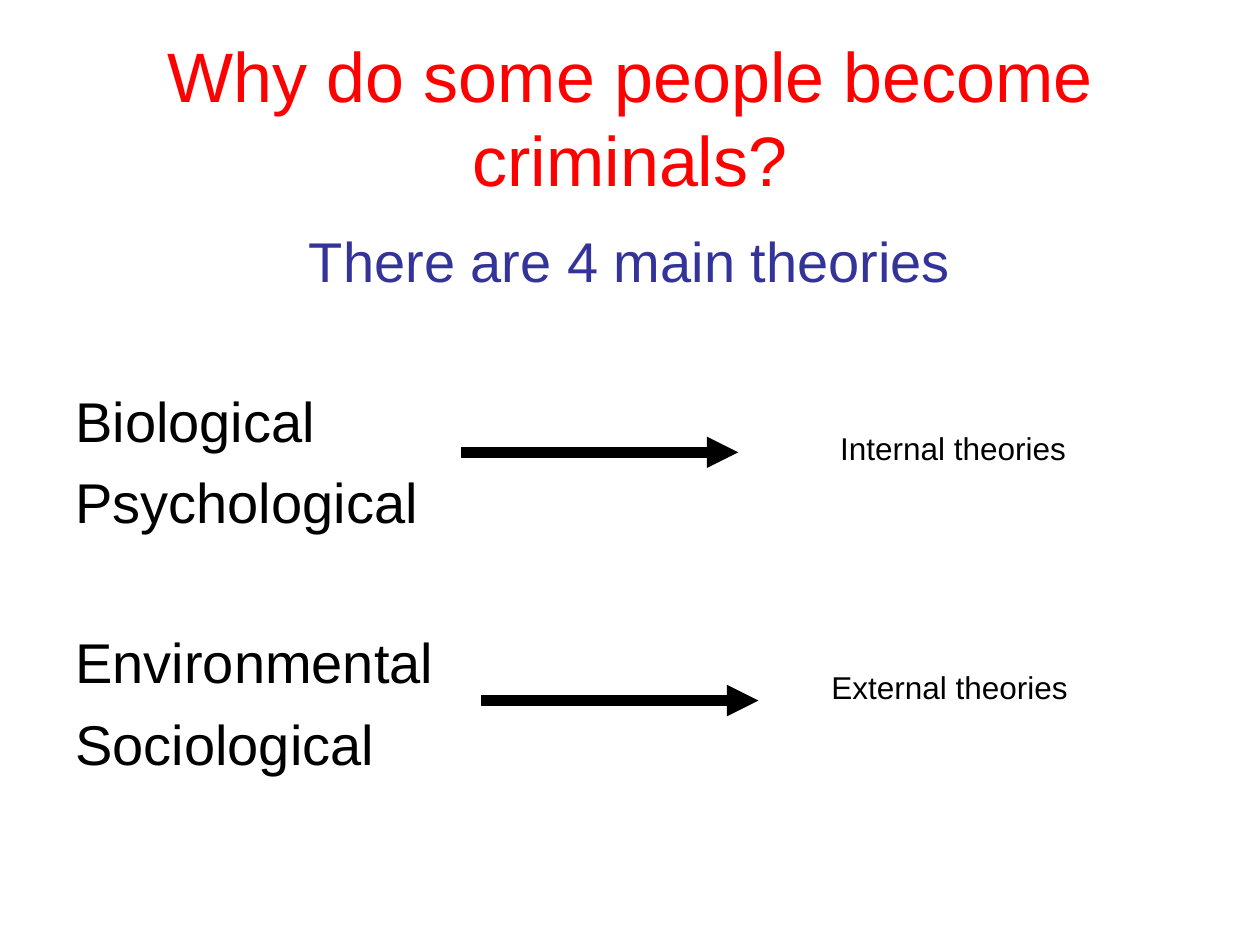
"""Build a slide that sorts four theories of crime into internal and external ones."""
import pptx
import pptx.dml.color
import pptx.enum.shapes
import pptx.enum.text
import pptx.oxml
import pptx.oxml.ns
import pptx.util

Inches = pptx.util.Inches
Pt = pptx.util.Pt
ALIGN = pptx.enum.text.PP_ALIGN
ANCHOR = pptx.enum.text.MSO_ANCHOR
AUTO_SIZE = pptx.enum.text.MSO_AUTO_SIZE

RED, BLUE, BLACK = "FF0000", "333399", "000000"
LINE_GAP, GROUP_GAP = 8, 53
THEORIES = [
    ("There are 4 main theories", BLUE, ALIGN.CENTER, 0),
    ("Biological", BLACK, ALIGN.LEFT, GROUP_GAP),
    ("Psychological", BLACK, ALIGN.LEFT, LINE_GAP),
    ("Environmental", BLACK, ALIGN.LEFT, GROUP_GAP),
    ("Sociological", BLACK, ALIGN.LEFT, LINE_GAP),
]
ARROWS = [(3.66, 3.59), (3.82, 5.56)]
ARROW_LENGTH = 2.2
LABELS = [("Internal theories", 6.57, 3.36), ("External theories", 6.5, 5.25)]


def color(value):
    """Return the RGB colour of a hex string."""
    return pptx.dml.color.RGBColor.from_string(value)


def apply_format(target, values):
    """Set each attribute of the target from a dict."""
    for name, value in values.items():
        setattr(target, name, value)


def write_paragraph(paragraph, text, size, hex_color, alignment, space_before=0):
    """Fill one paragraph with formatted text."""
    paragraph.text = text
    apply_format(paragraph, {"alignment": alignment, "space_before": Pt(space_before)})
    apply_format(paragraph.font, {"name": "Arial", "size": Pt(size)})
    paragraph.font.color.rgb = color(hex_color)


def write_title(slide, text):
    """Place and fill the title placeholder."""
    title = slide.shapes.title
    apply_format(title, {"left": Inches(0.5), "top": Inches(0.3),
                         "width": Inches(9), "height": Inches(1.25)})
    apply_format(title.text_frame, {"word_wrap": True, "vertical_anchor": ANCHOR.MIDDLE,
                                    "auto_size": AUTO_SIZE.NONE})
    write_paragraph(title.text_frame.paragraphs[0], text, 40, RED, ALIGN.CENTER)


def add_text(slide, left, top, width, height, auto_size=AUTO_SIZE.NONE):
    """Add a wrapping text box and return its text frame."""
    shape = slide.shapes.add_textbox(Inches(left), Inches(top), Inches(width), Inches(height))
    apply_format(shape.text_frame, {"word_wrap": True, "auto_size": auto_size})
    return shape.text_frame


def add_theories(slide):
    """Add the heading and the two groups of theories."""
    frame = add_text(slide, 0.5, 1.75, 9, 4.95)
    for index, (text, hex_color, alignment, gap) in enumerate(THEORIES):
        paragraph = frame.add_paragraph() if index else frame.paragraphs[0]
        write_paragraph(paragraph, text, 32, hex_color, alignment, gap)


def add_arrow(slide, left, top):
    """Add a thick horizontal arrow pointing right."""
    connector = slide.shapes.add_connector(
        pptx.enum.shapes.MSO_CONNECTOR.STRAIGHT,
        Inches(left), Inches(top), Inches(left + ARROW_LENGTH), Inches(top))
    connector.line.width = Pt(6)
    connector.line.color.rgb = color(BLACK)
    head = pptx.oxml.parse_xml(
        f'<a:tailEnd {pptx.oxml.ns.nsdecls("a")} type="triangle"/>')
    connector.line._get_or_add_ln().append(head)
    properties = connector._element.spPr
    properties.append(pptx.oxml.parse_xml(f'<a:effectLst {pptx.oxml.ns.nsdecls("a")}/>'))


def add_label(slide, text, left, top):
    """Add the name of a group of theories."""
    frame = add_text(slide, left, top, 2.91, 0.4, AUTO_SIZE.SHAPE_TO_FIT_TEXT)
    write_paragraph(frame.paragraphs[0], text, 18, BLACK, ALIGN.LEFT)


def main():
    """Build and save the presentation."""
    presentation = pptx.Presentation()
    apply_format(presentation, {"slide_width": Inches(10), "slide_height": Inches(7.5)})
    slide = presentation.slides.add_slide(presentation.slide_layouts[5])
    write_title(slide, "Why do some people become criminals?")
    add_theories(slide)
    for left, top in ARROWS:
        add_arrow(slide, left, top)
    for text, left, top in LABELS:
        add_label(slide, text, left, top)
    presentation.save("out.pptx")


if __name__ == "__main__":
    main()
